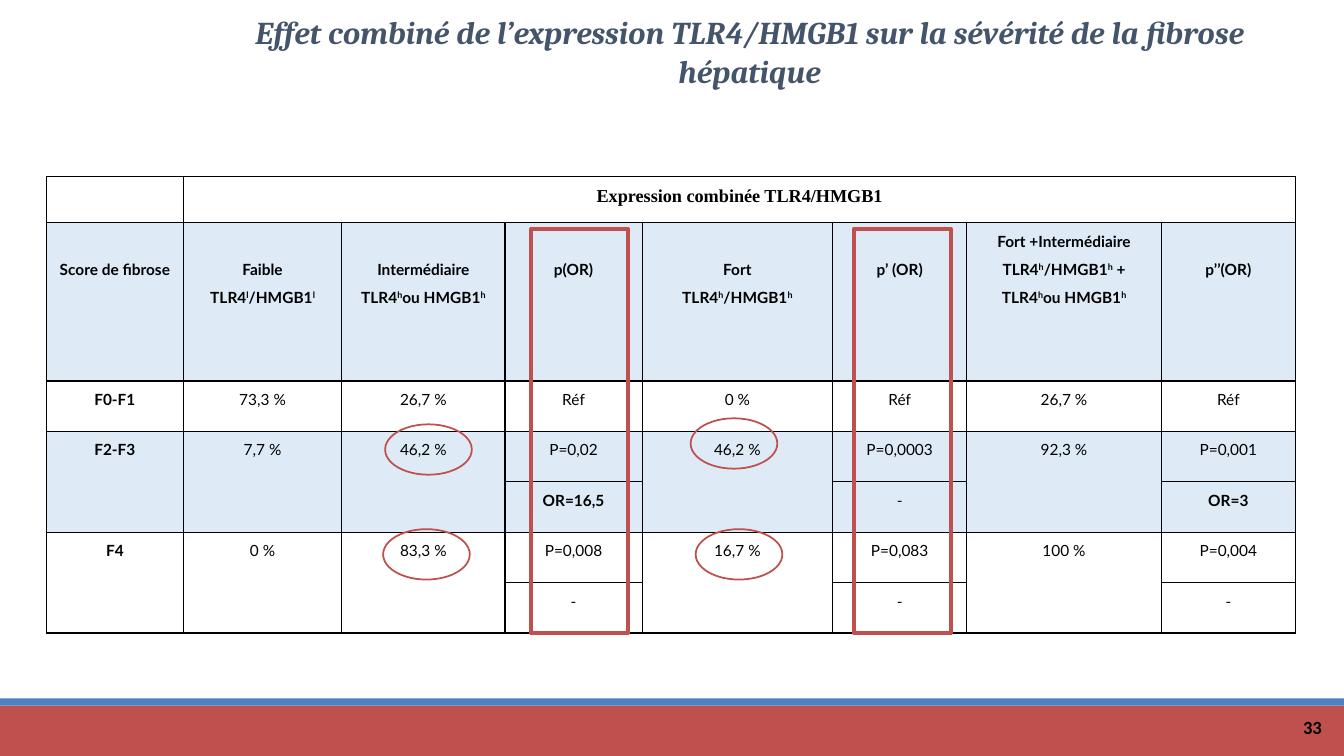
from lxml.etree import SubElement
from pptx import Presentation
from pptx.dml.color import RGBColor
from pptx.enum.shapes import MSO_SHAPE
from pptx.enum.text import MSO_ANCHOR, MSO_AUTO_SIZE, PP_ALIGN
from pptx.oxml.ns import qn
from pptx.util import Inches, Pt

RED = RGBColor(0xC0, 0x50, 0x4D)
BLUE = RGBColor(0x4F, 0x81, 0xBD)
PALE = RGBColor(0xDE, 0xEA, 0xF6)
SLATE = RGBColor(0x44, 0x54, 0x6A)
BLACK = RGBColor(0, 0, 0)

TITLE = "Effet combiné de l’expression TLR4/HMGB1 sur la sévérité de la fibrose hépatique"
PAGE = "33"
SPANNER = "Expression combinée TLR4/HMGB1"
HEADERS = [
    ["Score de fibrose"],
    ["Faible", "TLR4|l|/HMGB1|l"],
    ["Intermédiaire", "TLR4|h|ou HMGB1|h"],
    ["p(OR)"],
    ["Fort", "TLR4|h|/HMGB1|h"],
    ["p’ (OR)"],
    ["Fort +Intermédiaire", "TLR4|h|/HMGB1|h| + TLR4|h|ou HMGB1|h"],
    ["p’’(OR)"],
]
BODY = [
    ["F0-F1", "73,3 %", "26,7 %", "Réf", "0 %", "Réf", "26,7 %", "Réf"],
    ["F2-F3", "7,7 %", "46,2 %", "P=0,02", "46,2 %", "P=0,0003", "92,3 %", "P=0,001"],
    [None, None, None, "OR=16,5", None, "-", None, "OR=3"],
    ["F4", "0 %", "83,3 %", "P=0,008", "16,7 %", "P=0,083", "100 %", "P=0,004"],
    [None, None, None, "-", None, "-", None, "-"],
]
COL_WIDTHS = [1.36, 1.57, 1.62, 1.36, 1.89, 1.33, 1.93, 1.33]
ROW_HEIGHTS = [0.46, 1.57] + [0.5] * len(BODY)
PALE_ROWS = {1, 3, 4}
HEADER_DROP = 0.28
P_FRAMES = [5.27, 8.47]
VALUE_RINGS = [(3.82, 4.21), (3.8, 5.25), (6.9, 5.25), (6.85, 4.15)]


def add_run(p, text, font, size, color=BLACK, bold=False, italic=False):
    r = p.add_run()
    r.text = text
    r.font.name, r.font.size = font, Pt(size)
    r.font.bold, r.font.italic = bold, italic
    r.font.color.rgb = color
    return r


def add_box(s, kind, x, y, w, h, fill=None, line=None, weight=1):
    sp = s.shapes.add_shape(kind, Inches(x), Inches(y), Inches(w), Inches(h))
    sp.shadow.inherit = False
    if fill is None:
        sp.fill.background()
    else:
        sp.fill.solid()
        sp.fill.fore_color.rgb = fill
    if line is None:
        sp.line.fill.background()
    else:
        sp.line.color.rgb = line
        sp.line.width = Pt(weight)


def format_cell(cell, pale):
    cell.margin_left = cell.margin_right = Inches(0.05)
    cell.margin_top = cell.margin_bottom = 0
    tcPr = cell._tc.get_or_add_tcPr()
    for side in ("lnL", "lnR", "lnT", "lnB"):
        ln = SubElement(tcPr, qn(f"a:{side}"), w=str(Pt(1)))
        fill = SubElement(ln, qn("a:solidFill"))
        SubElement(fill, qn("a:srgbClr"), val=str(BLACK))
    if pale:
        cell.fill.solid()
        cell.fill.fore_color.rgb = PALE
    else:
        cell.fill.background()


def write_cell(cell, lines, bold, font="Lato", size=11):
    tf = cell.text_frame
    for i, line in enumerate(lines):
        p = tf.paragraphs[0] if i == 0 else tf.add_paragraph()
        p.alignment = PP_ALIGN.CENTER
        p.line_spacing = 1.5
        for j, piece in enumerate(line.split("|")):
            if piece:
                r = add_run(p, piece, font, size, bold=bold)
                if j % 2:
                    r._r.get_or_add_rPr().set("baseline", "30000")


def add_results_table(s):
    frame = s.shapes.add_table(
        len(ROW_HEIGHTS), len(COL_WIDTHS), Inches(0.46), Inches(1.75),
        Inches(sum(COL_WIDTHS)), Inches(sum(ROW_HEIGHTS)))
    table = frame.table
    table.first_row = table.horz_banding = False
    for col, width in zip(table.columns, COL_WIDTHS):
        col.width = Inches(width)
    for row, height in zip(table.rows, ROW_HEIGHTS):
        row.height = Inches(height)
    for r, row in enumerate(table.rows):
        for cell in row.cells:
            format_cell(cell, r in PALE_ROWS)

    table.cell(0, 1).merge(table.cell(0, len(COL_WIDTHS) - 1))
    write_cell(table.cell(0, 1), [SPANNER], True, "Times New Roman", 13)
    for c, lines in enumerate(HEADERS):
        cell = table.cell(1, c)
        if not lines[0].startswith("Fort +"):
            cell.margin_top = Inches(HEADER_DROP)
        write_cell(cell, lines, True)
    for r, values in enumerate(BODY, start=2):
        for c, value in enumerate(values):
            if value is None:
                table.cell(r - 1, c).merge(table.cell(r, c))
            else:
                write_cell(table.cell(r, c), [value], c == 0 or value.startswith("OR="))


def main():
    prs = Presentation()
    prs.slide_width, prs.slide_height = Inches(13.33), Inches(7.5)
    s = prs.slides.add_slide(prs.slide_layouts[5])

    add_box(s, MSO_SHAPE.RECTANGLE, 0, 7, 13.33, 0.5, fill=RED)
    add_box(s, MSO_SHAPE.RECTANGLE, 0, 6.93, 13.33, 0.07, fill=BLUE)
    add_results_table(s)

    title = s.shapes.title
    title.left, title.top = Inches(2.32), Inches(0.08)
    title.width, title.height = Inches(10.23), Inches(0.86)
    tf = title.text_frame
    tf.auto_size = MSO_AUTO_SIZE.NONE
    tf.vertical_anchor = MSO_ANCHOR.TOP
    p = tf.paragraphs[0]
    p.alignment = PP_ALIGN.CENTER
    add_run(p, TITLE, "Cambria", 22.7, SLATE, bold=True, italic=True)

    number = s.shapes.add_textbox(Inches(11.65), Inches(7.08), Inches(1.56), Inches(0.27))
    tf = number.text_frame
    tf.word_wrap = True
    tf.vertical_anchor = MSO_ANCHOR.MIDDLE
    p = tf.paragraphs[0]
    p.alignment = PP_ALIGN.RIGHT
    add_run(p, PAGE, "Calibri", 13.3, bold=True)

    for x in P_FRAMES:
        add_box(s, MSO_SHAPE.RECTANGLE, x, 2.27, 0.96, 4.01, line=RED, weight=3)
    for x, y in VALUE_RINGS:
        add_box(s, MSO_SHAPE.OVAL, x, y, 0.86, 0.5, line=RED, weight=1.25)

    prs.save("out.pptx")


if __name__ == "__main__":
    main()
